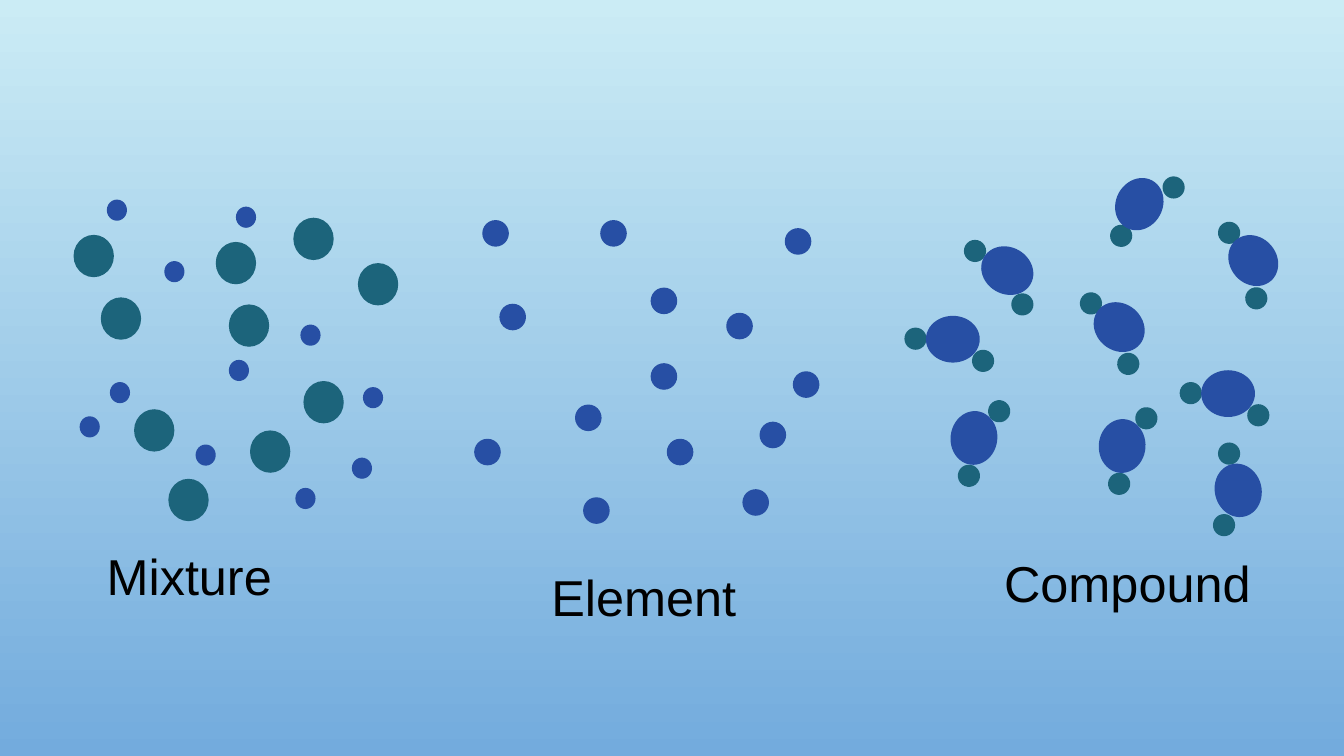
import math

from pptx import Presentation
from pptx import util as u
from pptx.dml.color import RGBColor
from pptx.enum import shapes, text

PX = 9144
COLOURS = {
    "sky": "CBECF5",
    "sea": "73ABDD",
    "blue": "274FA4",
    "teal": "1C647B",
    "label": "000000",
}
LABEL_FORMAT = {"name": "Arial", "size": u.Pt(36)}
LABEL_FRAME = {
    "word_wrap": True,
    "auto_size": text.MSO_AUTO_SIZE.NONE,
    "vertical_anchor": text.MSO_ANCHOR.TOP,
    "margin_top": 10 * PX,
    "margin_bottom": 0,
}

ELEMENT_BOX = (471, 219)
COMPOUND_BOX = (897, 176)
MIXTURE_BOX = (73, 198)

ELEMENT_ATOMS = [
    (25, 83), (125, 0), (8, 0), (175, 142), (250, 92), (308, 8), (175, 67),
    (100, 183), (283, 200), (316, 150), (0, 217), (191, 217), (266, 267), (108, 275),
]
MOLECULES = [
    (102, 92, 30.3), (346, 83, 49.2), (216, 267, 274.1),
    (321, 214, 0), (69, 259, 277), (213, 149, 40.1),
    (233, 26, 298.6), (48, 160, 0), (331, 310, 75.6),
]
SMALL_PARTICLES = [
    (121, 243), (161, 7), (154, 159), (276, 256), (6, 215), (33, 0),
    (287, 186), (90, 61), (225, 124), (220, 286), (36, 181),
]
LARGE_PARTICLES = [
    (218, 18), (282, 63), (228, 180), (0, 35), (141, 42),
    (27, 97), (154, 104), (94, 277), (175, 229), (60, 208),
]


def colour(name):
    return RGBColor.from_string(COLOURS[name])


def place(box, left, top, width, height):
    return [round(value) * PX for value in (box[0] + left, box[1] + top, width, height)]


def add_particle(group, box, position, size, fill, outlined=False, rotation=0):
    shape = group.shapes.add_shape(shapes.MSO_SHAPE.OVAL, *place(box, *position, *size))
    shape.shadow.inherit = False
    shape.rotation = rotation
    shape.fill.solid()
    shape.fill.fore_color.rgb = colour(fill)
    if outlined:
        shape.line.color.rgb = colour(fill)
        shape.line.width = u.Pt(1)
    else:
        shape.line.fill.background()


def add_label(group, box, bounds, wording):
    frame = group.shapes.add_textbox(*place(box, *bounds)).text_frame
    for name, value in LABEL_FRAME.items():
        setattr(frame, name, value)
    paragraph = frame.paragraphs[0]
    paragraph.alignment = text.PP_ALIGN.LEFT
    run = paragraph.add_run()
    run.text = wording
    for name, value in LABEL_FORMAT.items():
        setattr(run.font, name, value)
    run.font.color.rgb = colour("label")


def add_molecule(group, box, centre_x, centre_y, rotation):
    cosine = math.cos(math.radians(rotation))
    sine = math.sin(math.radians(rotation))
    parts = [
        (-37, 0, 22, 22, "teal"),
        (0, 0, 52, 45, "blue"),
        (30, 22, 22, 22, "teal"),
    ]
    for x, y, width, height, fill in parts:
        left = centre_x + x * cosine - y * sine - width / 2
        top = centre_y + x * sine + y * cosine - height / 2
        add_particle(group, box, (left, top), (width, height), fill, fill == "blue", rotation)


def build_element(slide, box):
    group = slide.shapes.add_group_shape()
    for position in ELEMENT_ATOMS:
        add_particle(group, box, position, (25, 25), "blue", outlined=True)
    add_label(group, box, (66, 333, 233, 70), "Element")


def build_compound(slide, box):
    group = slide.shapes.add_group_shape()
    for molecule in MOLECULES:
        add_molecule(group, box, *molecule)
    add_label(group, box, (89, 362, 295, 63), "Compound")


def build_mixture(slide, box):
    group = slide.shapes.add_group_shape()
    for position in SMALL_PARTICLES:
        add_particle(group, box, position, (20, 21), "blue")
    for position in LARGE_PARTICLES:
        add_particle(group, box, position, (40, 42), "teal")
    add_label(group, box, (23, 333, 246, 71), "Mixture")


def paint_background(slide):
    fill = slide.background.fill
    fill.gradient()
    fill.gradient_angle = 270
    for stop, name, position in zip(fill.gradient_stops, ("sky", "sea"), (0, 1)):
        stop.color.rgb = colour(name)
        stop.position = position


def main():
    presentation = Presentation()
    presentation.slide_width = u.Inches(13.33)
    presentation.slide_height = u.Inches(7.5)
    slide = presentation.slides.add_slide(presentation.slide_layouts[6])
    paint_background(slide)
    build_element(slide, ELEMENT_BOX)
    build_compound(slide, COMPOUND_BOX)
    build_mixture(slide, MIXTURE_BOX)
    presentation.save("out.pptx")


if __name__ == "__main__":
    main()
